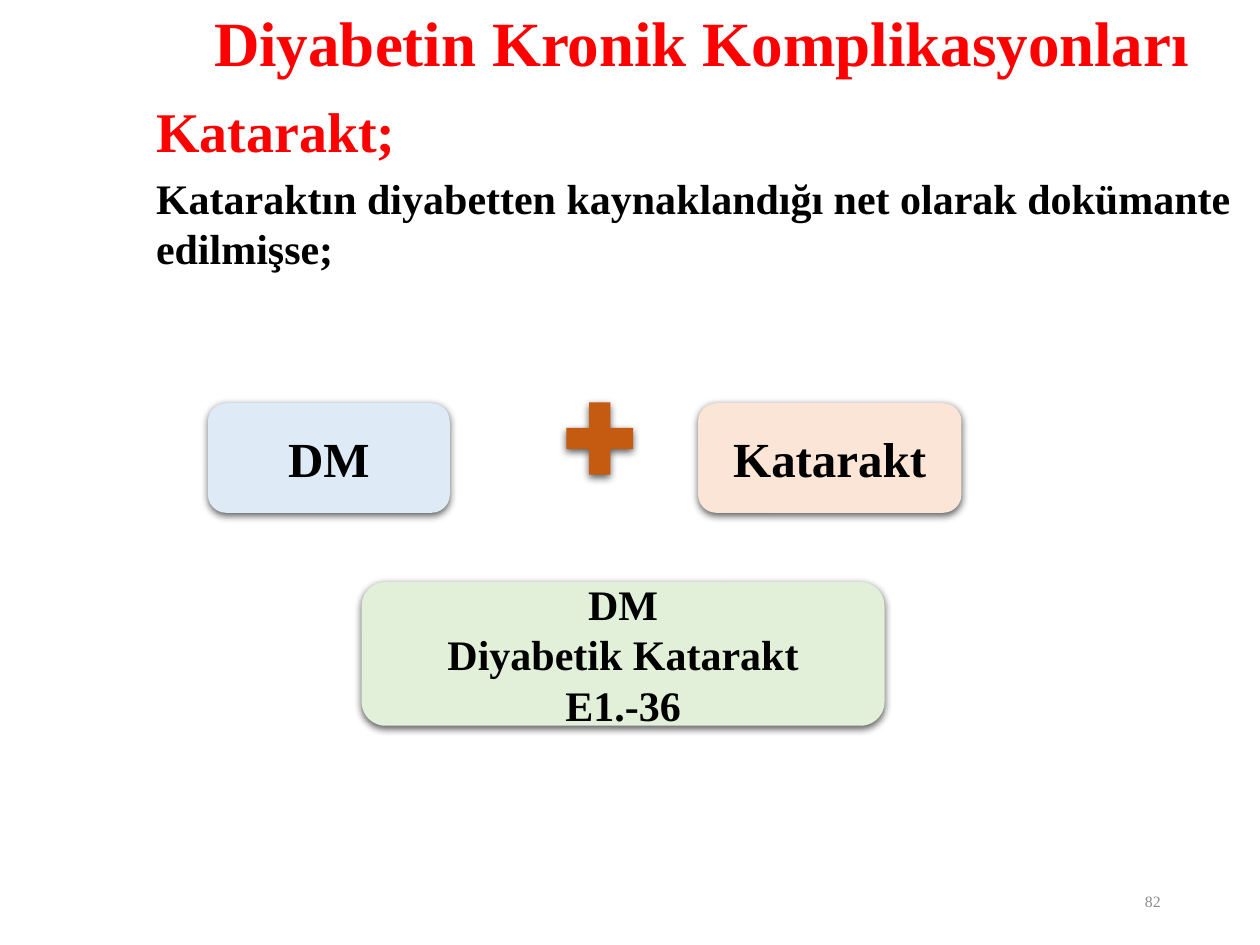
from lxml.etree import SubElement
from pptx import Presentation
from pptx.dml.color import RGBColor
from pptx.enum.shapes import MSO_SHAPE
from pptx.enum.text import MSO_ANCHOR, PP_ALIGN
from pptx.oxml.ns import qn
from pptx.util import Inches, Pt

RED = RGBColor(0xFF, 0x00, 0x00)
BLACK = RGBColor(0x00, 0x00, 0x00)
GRAY = RGBColor(0x8C, 0x8C, 0x8C)
BLUE = RGBColor(0xDE, 0xEB, 0xF7)
ORANGE = RGBColor(0xC5, 0x5A, 0x11)
PEACH = RGBColor(0xFB, 0xE5, 0xD6)
GREEN = RGBColor(0xE2, 0xF0, 0xD9)

deck = Presentation()
deck.slide_width, deck.slide_height = Inches(10), Inches(7.5)
page = deck.slides.add_slide(deck.slide_layouts[6])
COLUMN, ROW = deck.slide_width / 100, deck.slide_height / 100


def place(left, top, width, height):
    return [int(left * COLUMN), int(top * ROW), int(width * COLUMN), int(height * ROW)]


def write(box, lines, anchor, **paragraph_format):
    frame = box.text_frame
    frame.word_wrap = True
    frame.vertical_anchor = anchor
    for index, (text, size, color, bold) in enumerate(lines):
        para = frame.add_paragraph() if index else frame.paragraphs[0]
        for name, value in paragraph_format.items():
            if index or name != "space_before":
                setattr(para, name, value)
        span = para.add_run()
        span.text = text
        for name, value in {"name": "Times New Roman", "size": Pt(size), "bold": bold}.items():
            setattr(span.font, name, value)
        span.font.color.rgb = color


body = page.shapes.add_textbox(*place(11.4, 9.6, 87.4, 67.2))
write(body, [
    ("Katarakt;", 32, RED, True),
    ("Kataraktın diyabetten kaynaklandığı net olarak dokümante edilmişse;", 24, BLACK, True),
], MSO_ANCHOR.TOP, alignment=PP_ALIGN.LEFT, space_before=Pt(4.8))

diagram = [
    (MSO_SHAPE.ROUNDED_RECTANGLE, (16.5, 42.67, 19.2, 11.6), BLUE, 28, ["DM"]),
    (MSO_SHAPE.MATH_PLUS, (44, 41.2, 7.2, 10.4), ORANGE, 28, []),
    (MSO_SHAPE.ROUNDED_RECTANGLE, (55.4, 42.67, 20.9, 11.6), PEACH, 28, ["Katarakt"]),
    (MSO_SHAPE.ROUNDED_RECTANGLE, (28.7, 61.6, 41.5, 15.2), GREEN, 24,
     ["DM", "Diyabetik Katarakt", "E1.-36"]),
]
shadow_format = {"blurRad": Pt(4.5), "dist": Pt(1.5), "dir": 90 * 60000, "algn": "ctr", "rotWithShape": 0}
for kind, area, color, size, texts in diagram:
    box = page.shapes.add_shape(kind, *place(*area))
    box.fill.solid()
    box.fill.fore_color.rgb = color
    box.line.fill.background()
    box.shadow.inherit = False
    effects = box.element.spPr.find(qn("a:effectLst"))
    shadow = SubElement(effects, qn("a:outerShdw"))
    for name, value in shadow_format.items():
        shadow.set(name, str(value))
    shade = SubElement(shadow, qn("a:srgbClr"), val=str(BLACK))
    SubElement(shade, qn("a:alpha"), val="63000")
    write(box, [(text, size, BLACK, True) for text in texts], MSO_ANCHOR.MIDDLE,
          alignment=PP_ALIGN.CENTER)

number = page.shapes.add_textbox(*place(70.2, 92.8, 22.9, 5.2))
write(number, [("82", 9, GRAY, False)], MSO_ANCHOR.MIDDLE, alignment=PP_ALIGN.RIGHT)

title = page.shapes.add_textbox(*place(11.4, 0.67, 88.6, 12.53))
write(title, [("Diyabetin Kronik Komplikasyonları", 36, RED, True)], MSO_ANCHOR.TOP,
      alignment=PP_ALIGN.CENTER, line_spacing=0.9)

deck.save("out.pptx")
